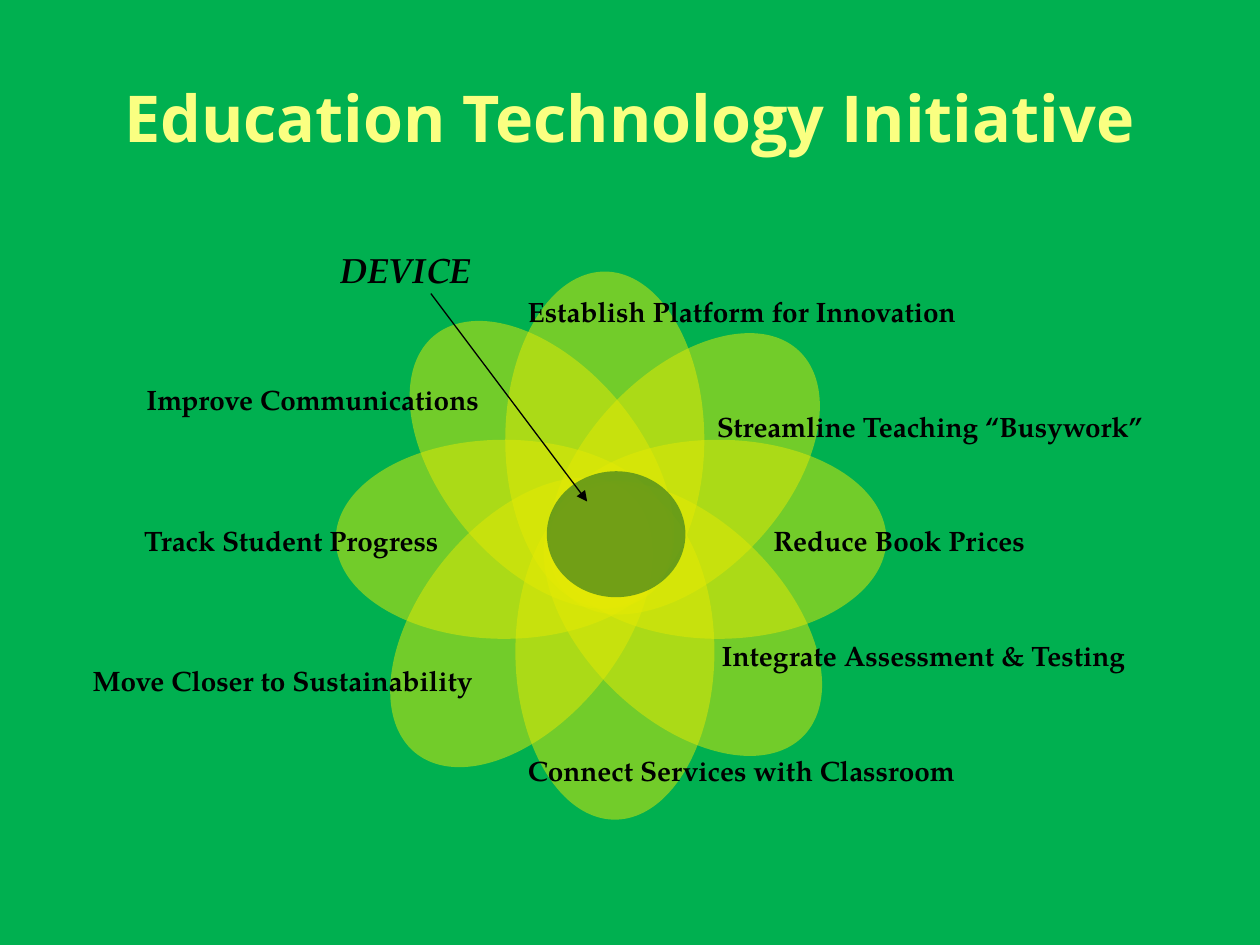
from lxml.etree import SubElement
from pptx import Presentation
from pptx.dml.color import RGBColor
from pptx.enum.shapes import MSO_CONNECTOR, MSO_SHAPE
from pptx.enum.text import MSO_ANCHOR, PP_ALIGN
from pptx.oxml.ns import qn
from pptx.util import Inches, Pt

COLORS = {"field": "00B050", "title": "FAFF81", "petal": "E4E905",
          "core": "005828", "ink": "000000"}
HEADING, BODY = "Open Sans", "TeX Gyre Pagella"
COLUMNS = 1000

TITLE = "Education Technology Initiative"
FLOWER_CENTER = (485, 428)
PETAL_SIZE = (267, 158)
PETALS = [
    (-85, 0, 0), (58, -52, 312.9), (-71, 66, 309.2), (57, 63, 44.2),
    (-55, -59, 50.1), (85, 0, 0), (-5, -79, 270), (3, 89, 270),
]
CORE = (4, -4, 110, 100)
LEFT, RIGHT = PP_ALIGN.LEFT, PP_ALIGN.RIGHT
GOALS = [
    ("Reduce Book Prices", 604, 411, 274, LEFT),
    ("Streamline Teaching “Busywork”", 559, 320, 392, LEFT),
    ("Integrate Assessment & Testing", 563, 502, 354, LEFT),
    ("Improve Communications", 70, 299, 320, RIGHT),
    ("Connect Services with Classroom", 409, 593, 371, LEFT),
    ("Track Student Progress", 25, 411, 333, RIGHT),
    ("Establish Platform for Innovation", 409, 229, 366, LEFT),
    ("Move Closer to Sustainability", 38, 522, 347, RIGHT),
]
DEVICE = ("DEVICE", 162, 192, 222, RIGHT)
POINTER = (342, 233, 466, 398)

deck = Presentation()
deck.slide_width, deck.slide_height = Inches(10), Inches(7.5)
slide = deck.slides.add_slide(deck.slide_layouts[6])
slide.background.fill.solid()
slide.background.fill.fore_color.rgb = RGBColor.from_string(COLORS["field"])


def grid(*cells):
    return [round(cell * deck.slide_width / COLUMNS) for cell in cells]


def add_label(text, left, top, width, align, height=37, size=16, font=BODY,
              color="ink", italic=None, anchor=MSO_ANCHOR.TOP):
    label = slide.shapes.add_textbox(*grid(left, top, width, height))
    frame = label.text_frame
    frame.word_wrap = True
    frame.vertical_anchor = anchor
    frame.text = text
    paragraph = frame.paragraphs[0]
    paragraph.alignment = align
    style = paragraph.runs[0].font
    style.name, style.size, style.bold, style.italic = font, Pt(size), True, italic
    style.color.rgb = RGBColor.from_string(COLORS[color])


def add_oval(group, dx, dy, width, height, color, rotation=0):
    left = FLOWER_CENTER[0] + dx - width / 2
    top = FLOWER_CENTER[1] + dy - height / 2
    oval = group.shapes.add_shape(MSO_SHAPE.OVAL, *grid(left, top, width, height))
    oval.rotation = rotation
    oval.shadow.inherit = False
    oval.fill.solid()
    oval.fill.fore_color.rgb = RGBColor.from_string(COLORS[color])
    oval.line.fill.background()
    tint = oval.fill._xPr.find(qn("a:solidFill"))[0]
    SubElement(tint, qn("a:alpha"), val="50000")


add_label(TITLE, 50, 30, 900, PP_ALIGN.CENTER, 125, 36.9, HEADING, "title",
          anchor=MSO_ANCHOR.MIDDLE)

flower = slide.shapes.add_group_shape()
for dx, dy, rotation in PETALS:
    add_oval(flower, dx, dy, *PETAL_SIZE, "petal", rotation)
add_oval(flower, *CORE, "core")

for goal in GOALS:
    add_label(*goal)
add_label(*DEVICE, height=44, size=20, italic=True)

pointer = slide.shapes.add_connector(MSO_CONNECTOR.STRAIGHT, *grid(*POINTER))
pointer.line.width = Pt(0.75)
pointer.line.color.rgb = RGBColor.from_string(COLORS["ink"])
SubElement(pointer.line._get_or_add_ln(), qn("a:tailEnd"), type="triangle")
SubElement(pointer._element.spPr, qn("a:effectLst"))

deck.save("out.pptx")
